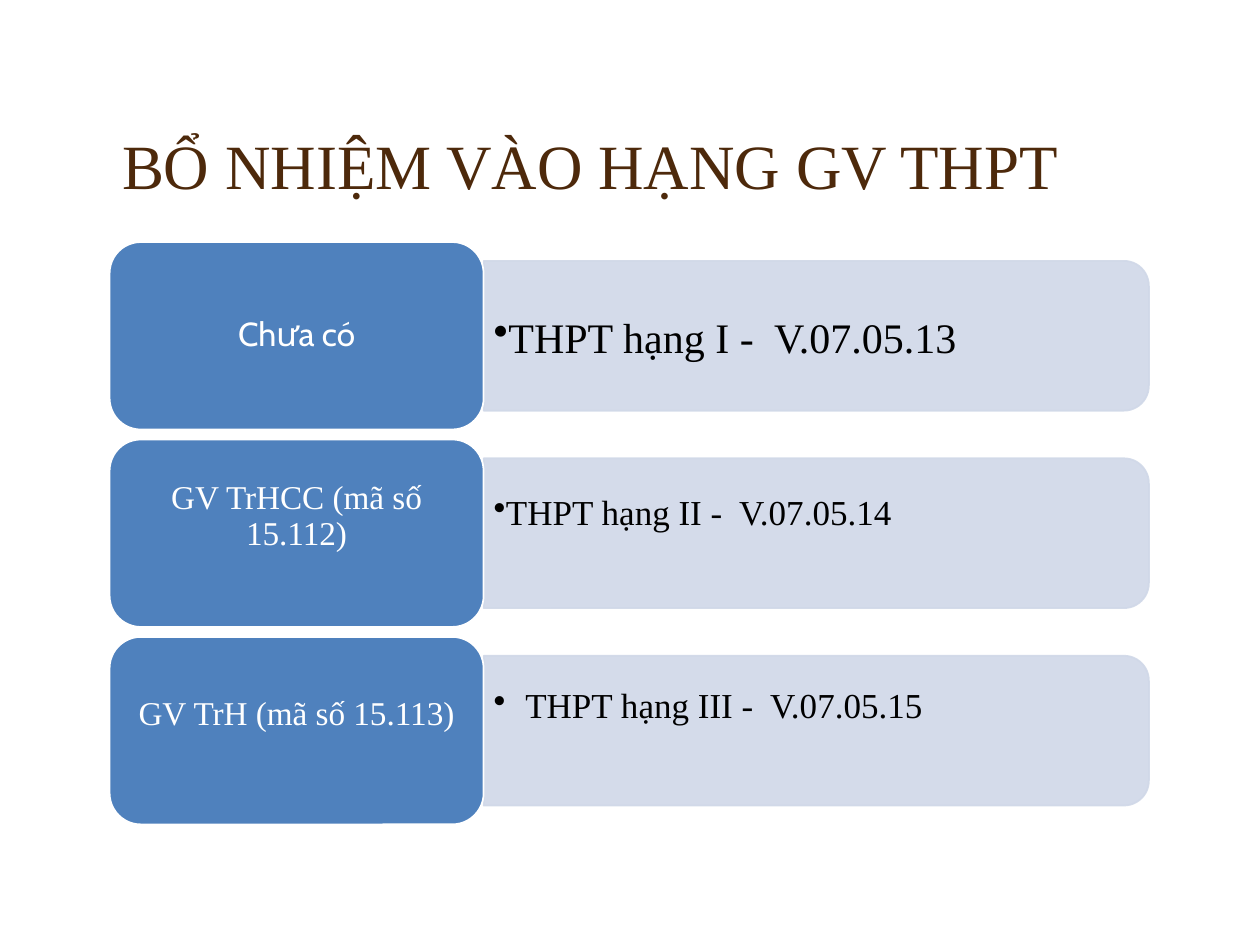
"""Build a slide that maps current teacher codes to upper secondary grades."""
import pptx
import pptx.util
import pptx.dml.color
import pptx.enum.shapes
import pptx.enum.text
import pptx.oxml.ns
import lxml.etree

Cm, Pt = pptx.util.Cm, pptx.util.Pt
RGBColor = pptx.dml.color.RGBColor
SHAPE = pptx.enum.shapes.MSO_SHAPE
ALIGN = pptx.enum.text.PP_ALIGN
ANCHOR = pptx.enum.text.MSO_ANCHOR
qn = pptx.oxml.ns.qn

BROWN = RGBColor(0x4D, 0x29, 0x0B)
BLUE = RGBColor(0x4F, 0x81, 0xBD)
PALE = RGBColor(0xD0, 0xD8, 0xE8)
WHITE = RGBColor(0xFF, 0xFF, 0xFF)
BLACK = RGBColor(0, 0, 0)
SERIF = "Times New Roman"

TITLE = "BỔ NHIỆM VÀO HẠNG GV THPT"
ROWS = [
    {"label": "Chưa có", "font": "Cabin", "lift": 0,
     "grade": "THPT hạng I -  V.07.05.13", "size": 24, "hang": 0, "rise": -0.15},
    {"label": "GV TrHCC (mã số 15.112)", "font": SERIF, "lift": 0.65,
     "grade": "THPT hạng II -  V.07.05.14", "size": 20, "hang": 0, "rise": 0.75},
    {"label": "GV TrH (mã số 15.113)", "font": SERIF, "lift": 0.65,
     "grade": "THPT hạng III -  V.07.05.15", "size": 20, "hang": 0.64, "rise": 0.95},
]

LEFT, TOP, PITCH = 2.21, 4.88, 3.98
LABEL_W, LABEL_H = 7.54, 3.78
BAR_W, BAR_H = 13.41, 3.02
INSET_X, INSET_Y = 0.2, 0.1


def apply(obj, values):
    for name, value in values.items():
        setattr(obj, name, value)


def style(sp, fill, line, alpha=None):
    sp.shadow.inherit = False
    sp.fill.solid()
    sp.fill.fore_color.rgb = fill
    sp.line.color.rgb = line
    sp.line.width = Pt(1)
    if alpha:
        for color in sp.fill._xPr.iter(qn("a:srgbClr")):
            lxml.etree.SubElement(color, qn("a:alpha"), val=str(alpha * 1000))


def write(tf, text, font, rise=0, align=ALIGN.LEFT, hang=None):
    apply(tf, {
        "word_wrap": True, "vertical_anchor": ANCHOR.MIDDLE,
        "margin_left": Cm(INSET_X), "margin_right": Cm(INSET_X),
        "margin_top": Cm(INSET_Y + 2 * max(-rise, 0)),
        "margin_bottom": Cm(INSET_Y + 2 * max(rise, 0)),
    })
    p = tf.paragraphs[0]
    r = p.add_run()
    r.text = text
    apply(p, {"alignment": align, "line_spacing": 0.9})
    if hang is not None:
        pPr = p._p.get_or_add_pPr()
        pPr.set("marL", str(Cm(hang)))
        pPr.set("indent", str(-Cm(hang)))
        lxml.etree.SubElement(pPr, qn("a:buChar"), char="•")
    r.font.color.rgb = font["color"]
    apply(r.font, {"name": font["name"], "size": Pt(font["size"])})


def add_row(s, row, top):
    middle = top + LABEL_H / 2
    bar_left = LEFT + LABEL_W
    bar = s.shapes.add_shape(
        SHAPE.ROUND_2_SAME_RECTANGLE,
        Cm(bar_left + (BAR_W - BAR_H) / 2), Cm(middle - BAR_W / 2),
        Cm(BAR_H), Cm(BAR_W))
    bar.rotation = 90
    style(bar, PALE, PALE, alpha=90)

    box = s.shapes.add_textbox(
        Cm(bar_left), Cm(middle - BAR_H / 2), Cm(BAR_W), Cm(BAR_H))
    write(box.text_frame, row["grade"],
          {"name": SERIF, "size": row["size"], "color": BLACK},
          row["rise"] / 2, hang=row["hang"])

    label = s.shapes.add_shape(
        SHAPE.ROUNDED_RECTANGLE, Cm(LEFT), Cm(top), Cm(LABEL_W), Cm(LABEL_H))
    style(label, BLUE, WHITE)
    write(label.text_frame, row["label"],
          {"name": row["font"], "size": 19, "color": WHITE},
          row["lift"] / 2, ALIGN.CENTER)


def main():
    prs = pptx.Presentation()
    apply(prs, {"slide_width": Cm(25.4), "slide_height": Cm(19.05)})
    s = prs.slides.add_slide(prs.slide_layouts[5])
    title = s.shapes.title
    apply(title, {"left": Cm(LEFT), "top": Cm(0.84),
                  "width": Cm(20.96), "height": Cm(3.38)})
    write(title.text_frame, TITLE, {"name": SERIF, "size": 36, "color": BROWN})
    apply(title.text_frame, {
        "vertical_anchor": ANCHOR.BOTTOM, "margin_left": Cm(0.25),
        "margin_right": Cm(0.25), "margin_bottom": Cm(0.13),
        "auto_size": pptx.enum.text.MSO_AUTO_SIZE.NONE})
    for i, row in enumerate(ROWS):
        add_row(s, row, TOP + i * PITCH)
    prs.save("out.pptx")


if __name__ == "__main__":
    main()
